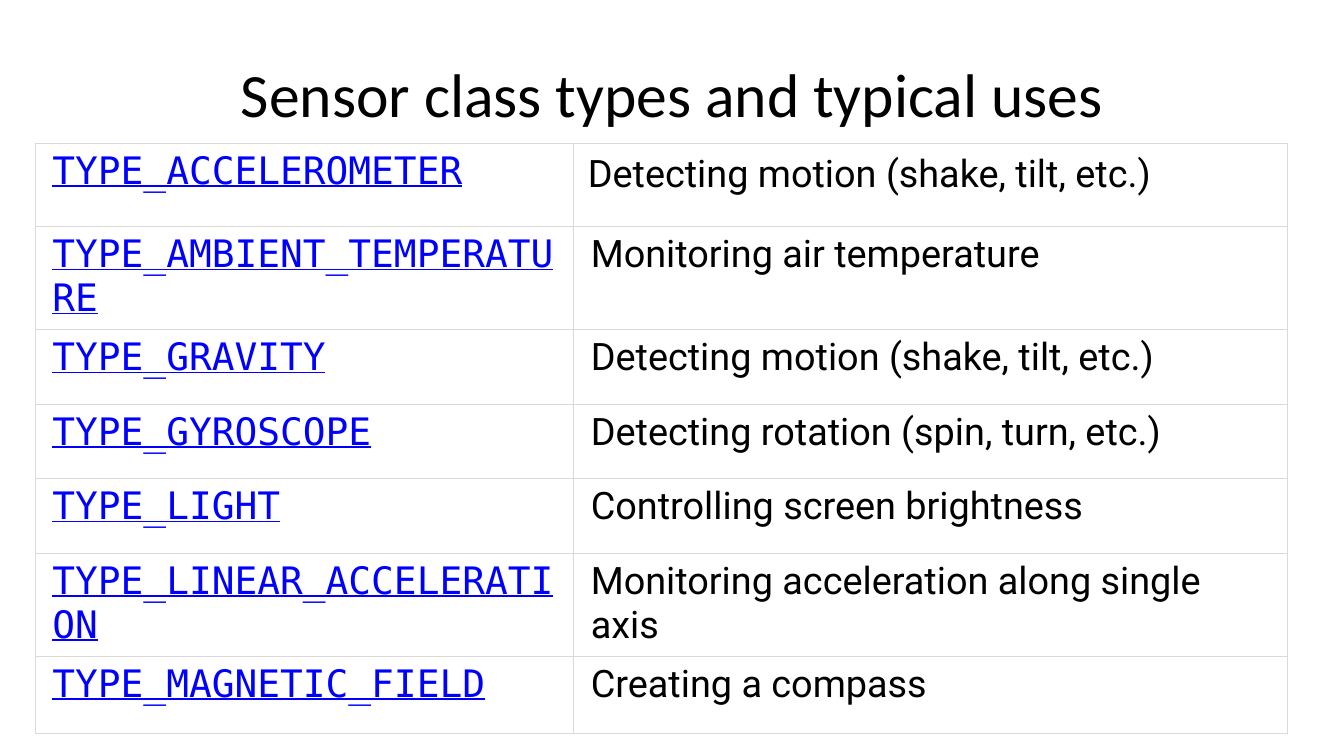
from dataclasses import dataclass

from lxml import etree
from pptx import Presentation
from pptx import util as u
from pptx.dml.color import RGBColor
from pptx.enum import text as t
from pptx.oxml import ns

BLACK = RGBColor(0, 0, 0)
BLUE = RGBColor(0, 0, 255)
WHITE = RGBColor(255, 255, 255)
GREY = RGBColor(0xD9, 0xD9, 0xD9)

COLS = (5.34, 7.08)
HEIGHTS = (0.83, 0.74, 0.74, 0.74, 0.74, 0.74, 0.77)
PADS = (0.17, 0.06)


@dataclass(frozen=True)
class Sensor:
    kind: str
    use: str
    pads: tuple[float, float] = PADS
    indent: float = 0


SENSORS = (
    Sensor("TYPE_ACCELEROMETER", "Detecting motion (shake, tilt, etc.)", (0.09, 0.09), 0.05),
    Sensor("TYPE_AMBIENT_TEMPERATURE", "Monitoring air temperature"),
    Sensor("TYPE_GRAVITY", "Detecting motion (shake, tilt, etc.)"),
    Sensor("TYPE_GYROSCOPE", "Detecting rotation (spin, turn, etc.)"),
    Sensor("TYPE_LIGHT", "Controlling screen brightness"),
    Sensor("TYPE_LINEAR_ACCELERATION", "Monitoring acceleration along single axis"),
    Sensor("TYPE_MAGNETIC_FIELD", "Creating a compass"),
)


def write(frame, words: str, *, font: str, size: float, color: RGBColor = BLACK,
          line: bool = False, align=t.PP_ALIGN.LEFT, gap: float = 0,
          indent: float = 0) -> None:
    frame.word_wrap = True
    para = frame.paragraphs[0]
    para.alignment = align
    para.space_before = para.space_after = u.Pt(gap)
    if indent:
        para._p.get_or_add_pPr().set("marL", str(u.Inches(indent)))
    run = para.add_run()
    run.text = words
    run.font.name = font
    run.font.size = u.Pt(size)
    run.font.color.rgb = color
    run.font.underline = line
    run.font.bold = False


def style(cell, pads: tuple[float, float]) -> None:
    side, edge = map(u.Inches, pads)
    cell.margin_left = cell.margin_right = side
    cell.margin_top = cell.margin_bottom = edge
    cell.vertical_anchor = t.MSO_ANCHOR.TOP
    props = cell._tc.get_or_add_tcPr()
    for tag in ("a:lnL", "a:lnR", "a:lnT", "a:lnB"):
        rule = etree.SubElement(props, ns.qn(tag), w=str(u.Pt(1)))
        fill = etree.SubElement(rule, ns.qn("a:solidFill"))
        etree.SubElement(fill, ns.qn("a:srgbClr"), val=str(GREY))
    cell.fill.solid()
    cell.fill.fore_color.rgb = WHITE


def add_title(slide) -> None:
    box = slide.shapes.add_textbox(u.Inches(0.67), u.Inches(0.3), u.Inches(12), u.Inches(1.25))
    box.text_frame.vertical_anchor = t.MSO_ANCHOR.MIDDLE
    write(box.text_frame, "Sensor class types and typical uses",
          font="Calibri", size=44, align=t.PP_ALIGN.CENTER)


def add_grid(slide) -> None:
    grid = slide.shapes.add_table(
        len(SENSORS), len(COLS), u.Inches(0.35), u.Inches(1.42),
        u.Inches(sum(COLS)), u.Inches(sum(HEIGHTS))).table
    grid.first_row = grid.horz_banding = False
    for col, width in zip(grid.columns, COLS):
        col.width = u.Inches(width)
    for row, height, sensor in zip(grid.rows, HEIGHTS, SENSORS):
        row.height = u.Inches(height)
        kind, use = row.cells
        style(kind, PADS)
        style(use, sensor.pads)
        write(kind.text_frame, sensor.kind, font="DejaVu Sans Mono", size=27,
              color=BLUE, line=True, gap=4)
        write(use.text_frame, sensor.use, font="Roboto", size=27,
              gap=4, indent=sensor.indent)


def main() -> None:
    deck = Presentation()
    deck.slide_width, deck.slide_height = u.Inches(13.33), u.Inches(7.5)
    slide = deck.slides.add_slide(deck.slide_layouts[6])
    add_title(slide)
    add_grid(slide)
    deck.save("out.pptx")


if __name__ == "__main__":
    main()
